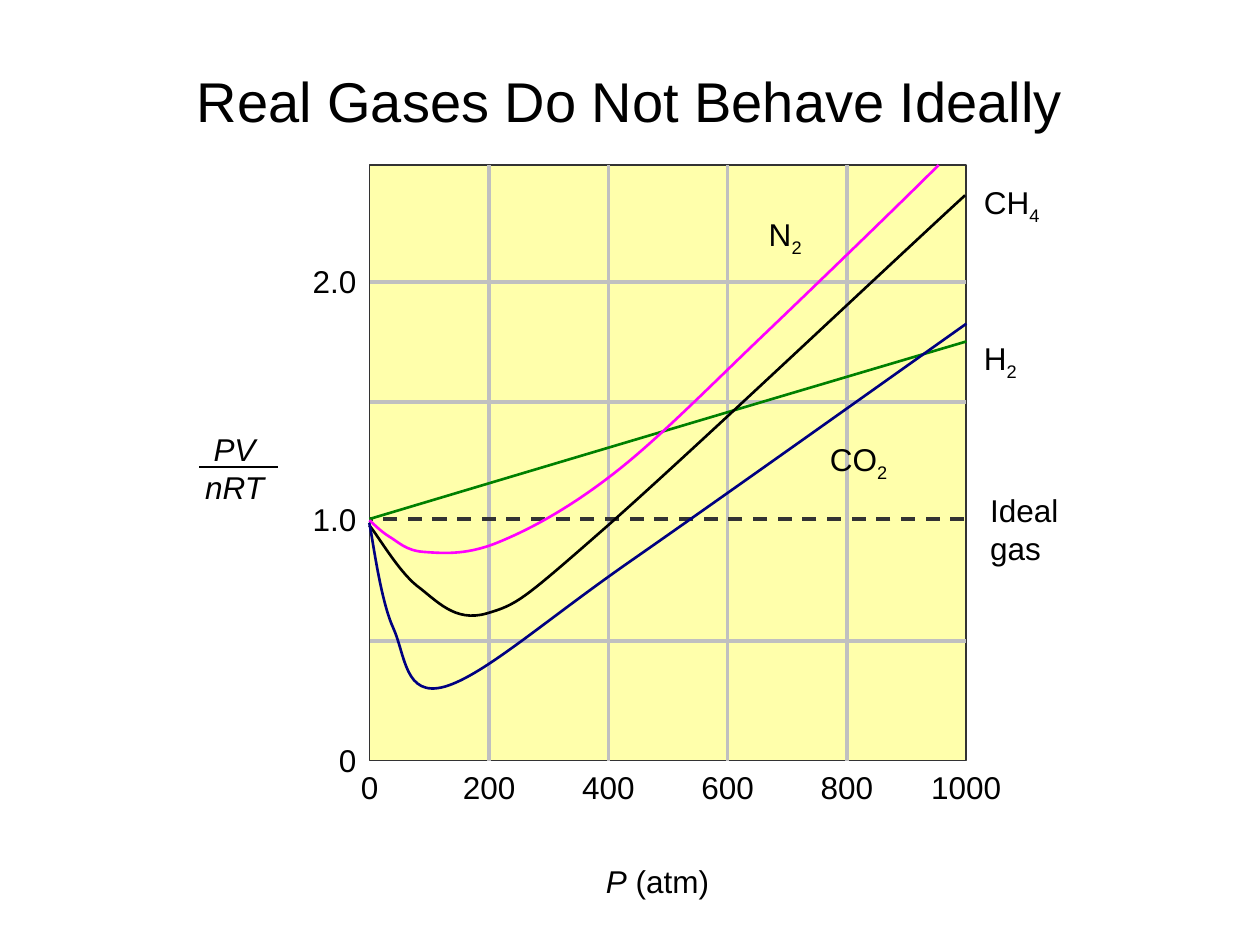
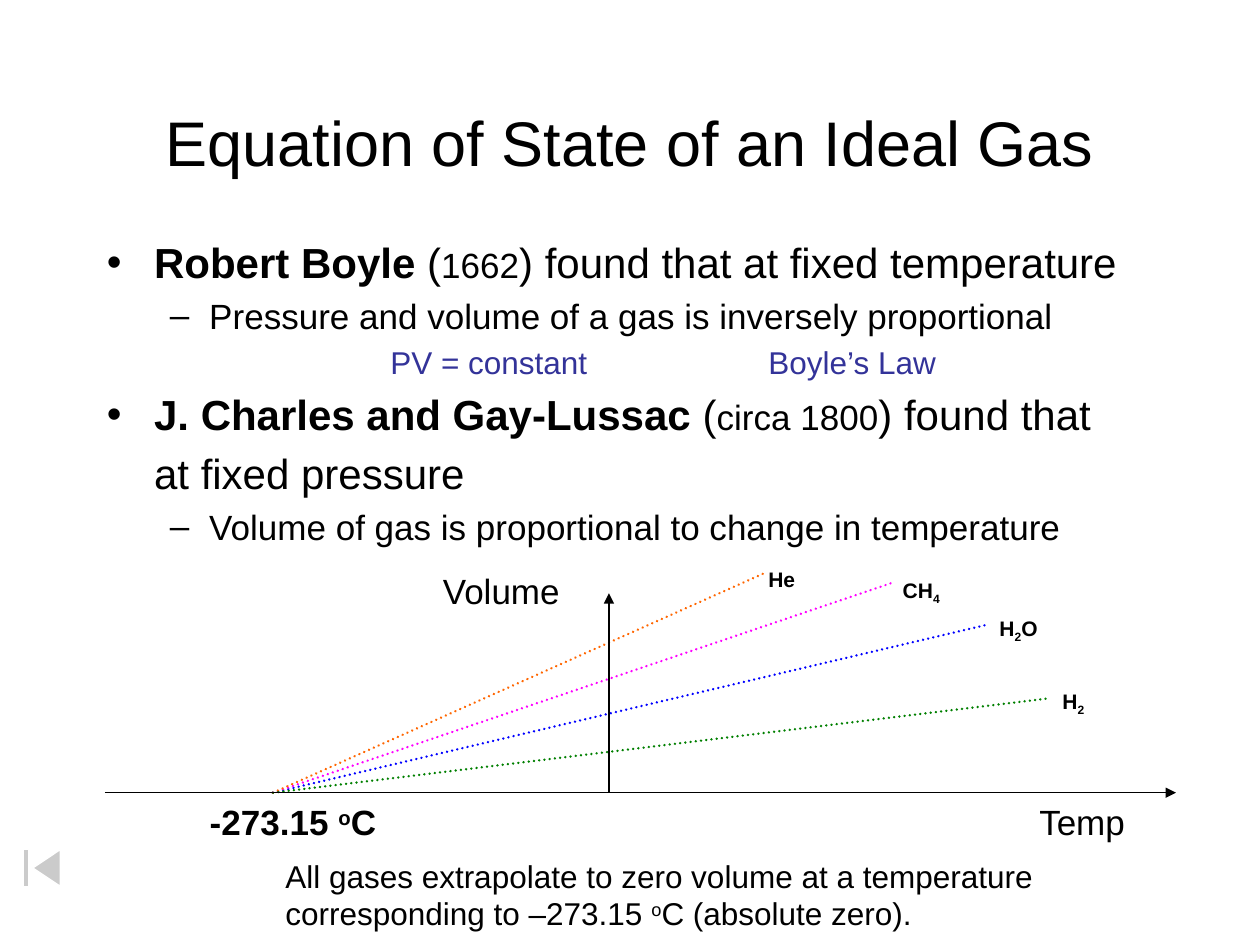
from lxml import etree
from pptx import Presentation
from pptx.dml.color import RGBColor
from pptx.enum import dml, shapes, text
from pptx.oxml.ns import qn
from pptx.util import Pt

hue = RGBColor.from_string
BLACK, WHITE, GREY, DARK = "000000", "FFFFFF", "C0C0C0", "333333"
PINK, GREEN, NAVY, BLUE, ORANGE = "FF00FF", "008000", "000080", "0000FF", "FF6600"
LEFT, MID, RIGHT = text.PP_ALIGN.LEFT, text.PP_ALIGN.CENTER, text.PP_ALIGN.RIGHT
DASH, DOT = dml.MSO_LINE.DASH, dml.MSO_LINE.ROUND_DOT
BOLD, ITAL, SUB, SUP = {"b": True}, {"i": True}, {"base": -25}, {"base": 30}


def write(page, box, lines, size=18, align=LEFT, anchor=text.MSO_ANCHOR.TOP):
    """Add a text box; each line is a list of (words, look) runs."""
    frame = page.shapes.add_textbox(*map(Pt, box)).text_frame
    frame.word_wrap = True
    frame.vertical_anchor = anchor
    for i, line in enumerate(lines):
        para = frame.paragraphs[0] if i == 0 else frame.add_paragraph()
        para.alignment = align
        for words, look in line:
            run = para.add_run()
            run.text = words
            font = run.font
            font.name = "Arial"
            font.size = Pt(look.get("size", size))
            font.bold = look.get("b", False)
            font.italic = look.get("i", False)
            font.color.rgb = hue(look.get("hue", BLACK))
            if "base" in look:
                run._r.get_or_add_rPr().set("baseline", str(look["base"] * 1000))
    return frame


def rule(page, ends, tint, width, dash=None, arrow=False):
    """Draw a straight line from (x1, y1) to (x2, y2)."""
    line = page.shapes.add_connector(shapes.MSO_CONNECTOR.STRAIGHT, *map(Pt, ends))
    line.line.color.rgb = hue(tint)
    line.line.width = Pt(width)
    props = line._element.spPr
    stroke = props.find(qn("a:ln"))
    if dash:
        line.line.dash_style = dash
    if dash == DOT:
        stroke.set("cap", "rnd")
    if arrow:
        etree.SubElement(stroke, qn("a:tailEnd"), type="triangle")
    etree.SubElement(props, qn("a:effectLst"))


deck = Presentation()
deck.slide_width, deck.slide_height = Pt(720), Pt(540)
pages = []
for title, top, size in [("Real Gases Do Not Behave Ideally", 12.2, 32),
                         ("Equation of State of an Ideal Gas", 36, 36)]:
    page = deck.slides.add_slide(deck.slide_layouts[6])
    write(page, (54, top, 612, 90), [[(title, {})]], size, MID, text.MSO_ANCHOR.MIDDLE)
    pages.append(page)
real, ideal = pages

# Slide 1: plot area and grid
x0, y0, top, step, rise = 211.3, 434.8, 94.3, 68.15, 68.4
x1 = x0 + 5 * step
plot = real.shapes.add_shape(shapes.MSO_SHAPE.RECTANGLE, Pt(x0), Pt(top), Pt(x1 - x0), Pt(y0 - top))
plot.shadow.inherit = False
plot.fill.solid()
plot.fill.fore_color.rgb = hue("FFFFAB")
plot.line.color.rgb = hue(DARK)
plot.line.width = Pt(0.75)
for i in range(1, 5):
    x = x0 + i * step
    rule(real, (x, top, x, y0), GREY, 2)
for i in (1, 3, 4):
    y = y0 - i * rise
    rule(real, (x1, y, x0, y), GREY, 2)
rule(real, (551, 296.6, 211, 296.6), DARK, 2, DASH)

# Gas curves: a start point, then two handles and an end point per Bezier arc
curves = [
    (GREEN, [(211, 296.6), (211, 296.6), (381.6, 245.5), (552.2, 195.1)]),
    (PINK, [(211, 297.4), (213.1, 298.8), (216.7, 303.1), (222.5, 306.7),
            (227.5, 309.6), (231.8, 314.6), (241.9, 315.4),
            (252, 316.1), (265.7, 317.5), (283.7, 310.3),
            (301.7, 303.1), (324.7, 290.9), (350.6, 270.7),
            (376.6, 250.6), (407.5, 218.9), (438.5, 189.4),
            (469.4, 159.8), (516.2, 114.5), (536.4, 94.3)]),
    (BLACK, [(211, 300.2), (216, 306), (227.5, 326.2), (238.3, 334.8),
             (249.8, 343.4), (259.9, 355.7), (277.9, 350.6),
             (295.2, 345.6), (298.1, 343.4), (343.4, 303.8),
             (389.5, 263.5), (508.3, 151.2), (551.5, 111.6)]),
    (NAVY, [(211, 298.8), (213.1, 308.9), (217.4, 342.7), (224.6, 358.6),
            (231.8, 374.4), (231.1, 398.9), (254.2, 392.4),
            (276.5, 385.9), (311, 355), (360.7, 320.4),
            (410.4, 285.8), (512.6, 213.1), (552.2, 185)]),
]
for tint, knots in curves:
    form = real.shapes.build_freeform(*map(Pt, knots[0]))
    form.add_line_segments([tuple(map(Pt, knot)) for knot in knots[1:]], close=False)
    curve = form.convert_to_shape()
    curve.shadow.inherit = False
    curve.fill.background()
    curve.line.color.rgb = hue(tint)
    curve.line.width = Pt(1.5)
    # Every three straight segments become one Bezier arc
    trace = next(curve._element.iter(qn("a:path")))
    for i, side in enumerate(trace.findall(qn("a:lnTo"))):
        if i % 3 == 0:
            arc = etree.SubElement(trace, qn("a:cubicBezTo"))
        arc.append(side[0])
        trace.remove(side)

# Slide 1: labels
for x, y, gas, count in [(555.1, 101.2, "CH", "4"), (555.1, 190.1, "H", "2"),
                         (432.2, 119.5, "N", "2"), (467.1, 247.7, "CO", "2")]:
    write(real, (x, y, 60, 29), [[(gas, {}), (count, SUB)]])
write(real, (558.7, 277.2, 70, 50), [[("Ideal", {})], [("gas", {})]])
for y, mark in [(146.4, "2.0"), (282.2, "1.0"), (419.8, "0")]:
    write(real, (150.7, y, 60, 29), [[(mark, {})]], align=RIGHT)
for i in range(6):
    write(real, (x0 + i * step - 35, 435.3, 70, 29), [[(str(200 * i), {})]], align=MID)
write(real, (339.1, 488.9, 90, 29), [[("P", ITAL), (" (atm)", {})]])
write(real, (104, 242.2, 60, 50), [[("PV", ITAL)], [("nRT", ITAL)]], align=MID)
rule(real, (113.8, 267.1, 159.1, 267.1), BLACK, 1.25)

# Slide 2: the laws, as (left margin, indent, bullet, size, runs)
small, law = {"size": 20}, {"size": 18, "hue": "333399"}
laws = [
    (27, -27, "•", 24, [("Robert Boyle", BOLD), (" (", {}), ("1662", small),
                        (") found that at fixed temperature", {})]),
    (58.5, -22.5, "–", 20, [("Pressure and volume of a gas is inversely proportional", small)]),
    (162, 0, None, 18, [("PV = constant\t\tBoyle’s Law", law)]),
    (27, -27, "•", 24, [("J. Charles and Gay-Lussac", BOLD), (" (", {}), ("circa 1800", small),
                        (") found that", {})]),
    (27, 0, None, 24, [("at fixed pressure", {})]),
    (58.5, -22.5, "–", 20, [("Volume of gas is proportional to change in temperature", small)]),
]
body = write(ideal, (54, 131.9, 612, 324), [row[4] for row in laws], 24)
for i, (para, (left, dent, sign, size, runs)) in enumerate(zip(body.paragraphs, laws)):
    if i:
        para.space_before = Pt(0.2 * size)
    props = para._p.get_or_add_pPr()
    props.set("marL", str(Pt(left)))
    props.set("indent", str(Pt(dent)))
    props.set("defTabSz", str(Pt(72)))
    if sign:
        etree.SubElement(props, qn("a:buFont"), typeface="Arial")
        etree.SubElement(props, qn("a:buChar"), char=sign)
    else:
        etree.SubElement(props, qn("a:buNone"))

# Slide 2: volume against temperature
zero, base = 156, 453
for x, y, tint in [(564, 357, BLUE), (510, 333, PINK), (438, 327, ORANGE), (600, 399, GREEN)]:
    rule(ideal, (zero, base, x, y), tint, 1.5, DOT)
rule(ideal, (60, base, 672, base), BLACK, 0.75, arrow=True)
rule(ideal, (348, base, 348, 339), BLACK, 0.75, arrow=True)
write(ideal, (246, 321.8, 100, 31), [[("Volume", {})]], 20)
write(ideal, (586.8, 453.9, 80, 31), [[("Temp", {})]], 20)
write(ideal, (112.8, 453.9, 130, 31),
      [[("-273.15 ", BOLD), ("o", {**BOLD, **SUP}), ("C", BOLD)]], 20)
write(ideal, (156, 486, 460, 50),
      [[("All gases extrapolate to zero volume at a temperature", {})],
       [("corresponding to –273.15 ", {}), ("o", SUP), ("C (absolute zero).", {})]])
low = {**BOLD, **SUB}
for x, y, runs in [(432, 320.4, [("He", BOLD)]),
                   (508.8, 326.2, [("CH", BOLD), ("4", low)]),
                   (564, 348, [("H", BOLD), ("2", low), ("O", BOLD)]),
                   (600, 390, [("H", BOLD), ("2", low)])]:
    write(ideal, (x, y, 50, 22), [runs], 12)

back = ideal.shapes.add_shape(shapes.MSO_SHAPE.ACTION_BUTTON_BEGINNING,
                              Pt(0), Pt(482), Pt(48), Pt(28))
back.shadow.inherit = False
back.fill.solid()
back.fill.fore_color.rgb = hue(WHITE)
shade = back._element.spPr.find(qn("a:solidFill"))[0]
etree.SubElement(shade, qn("a:alpha"), val="50000")
back.line.color.rgb = hue(WHITE)
back.line.width = Pt(0.75)

deck.save("out.pptx")
